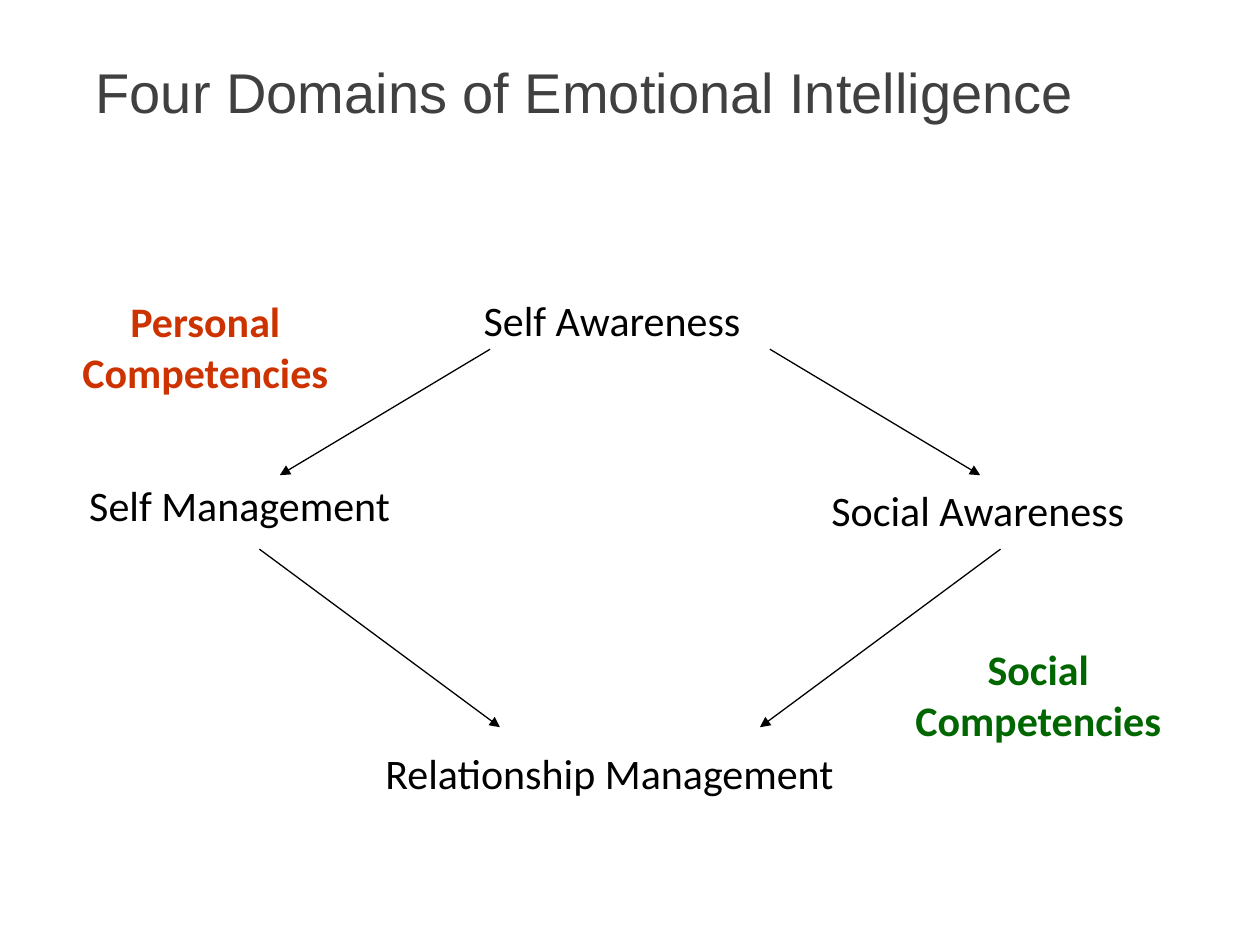
from dataclasses import dataclass
from lxml import etree
from pptx import Presentation
from pptx.dml.color import RGBColor
from pptx.enum.shapes import MSO_CONNECTOR
from pptx.enum.text import MSO_ANCHOR, MSO_AUTO_SIZE, PP_ALIGN
from pptx.oxml.ns import qn
from pptx.util import Cm, Pt

STRAIGHT = MSO_CONNECTOR.STRAIGHT
TOP = MSO_ANCHOR.TOP
FIT_SHAPE, FIXED = MSO_AUTO_SIZE.SHAPE_TO_FIT_TEXT, MSO_AUTO_SIZE.NONE
LEFT, CENTER = PP_ALIGN.LEFT, PP_ALIGN.CENTER


@dataclass(frozen=True)
class Theme:
    title: RGBColor = RGBColor(0x40, 0x40, 0x40)
    ink: RGBColor = RGBColor(0, 0, 0)
    personal: RGBColor = RGBColor(0xCC, 0x33, 0)
    social: RGBColor = RGBColor(0, 0x66, 0)
    title_font: str = "Arial"
    body_font: str = "Calibri"
    title_size: Pt = Pt(32)
    body_size: Pt = Pt(24)
    line_width: Pt = Pt(0.75)


theme = Theme()


def add_text(page, position, lines, color, size, font, bold=False, align=LEFT):
    box = page.shapes.add_textbox(*(Cm(value) for value in position))
    frame = box.text_frame
    frame.word_wrap = False
    frame.auto_size = FIT_SHAPE
    frame.vertical_anchor = TOP
    for index, line in enumerate(lines):
        para = frame.add_paragraph() if index else frame.paragraphs[0]
        para.alignment = align
        span = para.add_run()
        span.text = line
        span.font.name = font
        span.font.size = size
        span.font.bold = bold
        span.font.color.rgb = color
    return box


deck = Presentation()
deck.slide_width, deck.slide_height = Cm(25.4), Cm(19.05)
page = deck.slides.add_slide(deck.slide_layouts[6])

title = add_text(page, (1.68, 0.94, 22.28, 2.03), ["Four Domains of Emotional Intelligence"],
                 theme.title, theme.title_size, theme.title_font)
title.text_frame.word_wrap = True
title.text_frame.auto_size = FIXED
title.text_frame.margin_top = Cm(0.23)

domains = [
    ("Self Awareness", 9.5, 5.82, 6.4),
    ("Self Management", 1.55, 9.55, 7.16),
    ("Social Awareness", 16.51, 9.65, 7.24),
    ("Relationship Management", 7.52, 14.94, 10.36),
]
for name, left, top, width in domains:
    add_text(page, (left, top, width, 1.27), [name],
             theme.ink, theme.body_size, theme.body_font)

competencies = [
    ("Personal", 0.99, 5.84, theme.personal),
    ("Social", 17.78, 12.85, theme.social),
]
for name, left, top, color in competencies:
    add_text(page, (left, top, 6.3, 2.29), [name, "Competencies"],
             color, theme.body_size, theme.body_font, True, CENTER)

middle = 12.7
arrows = [(2.82, 7.04, 6.1, 9.58), (6.1, 11.07, 2.82 - 0.4, 14.66)]
arrows = [(2.82, 7.04, 7.06, 9.58), (7.47, 11.07, 2.62, 14.66)]
for start_offset, start_y, end_offset, end_y in arrows:
    for side in (-1, 1):
        arrow = page.shapes.add_connector(
            STRAIGHT,
            Cm(middle + side * start_offset), Cm(start_y),
            Cm(middle + side * end_offset), Cm(end_y))
        arrow.line.color.rgb = theme.ink
        arrow.line.width = theme.line_width
        etree.SubElement(arrow.line._get_or_add_ln(), qn("a:tailEnd"), type="triangle")
        etree.SubElement(arrow._element.spPr, qn("a:effectLst"))

deck.save("out.pptx")
